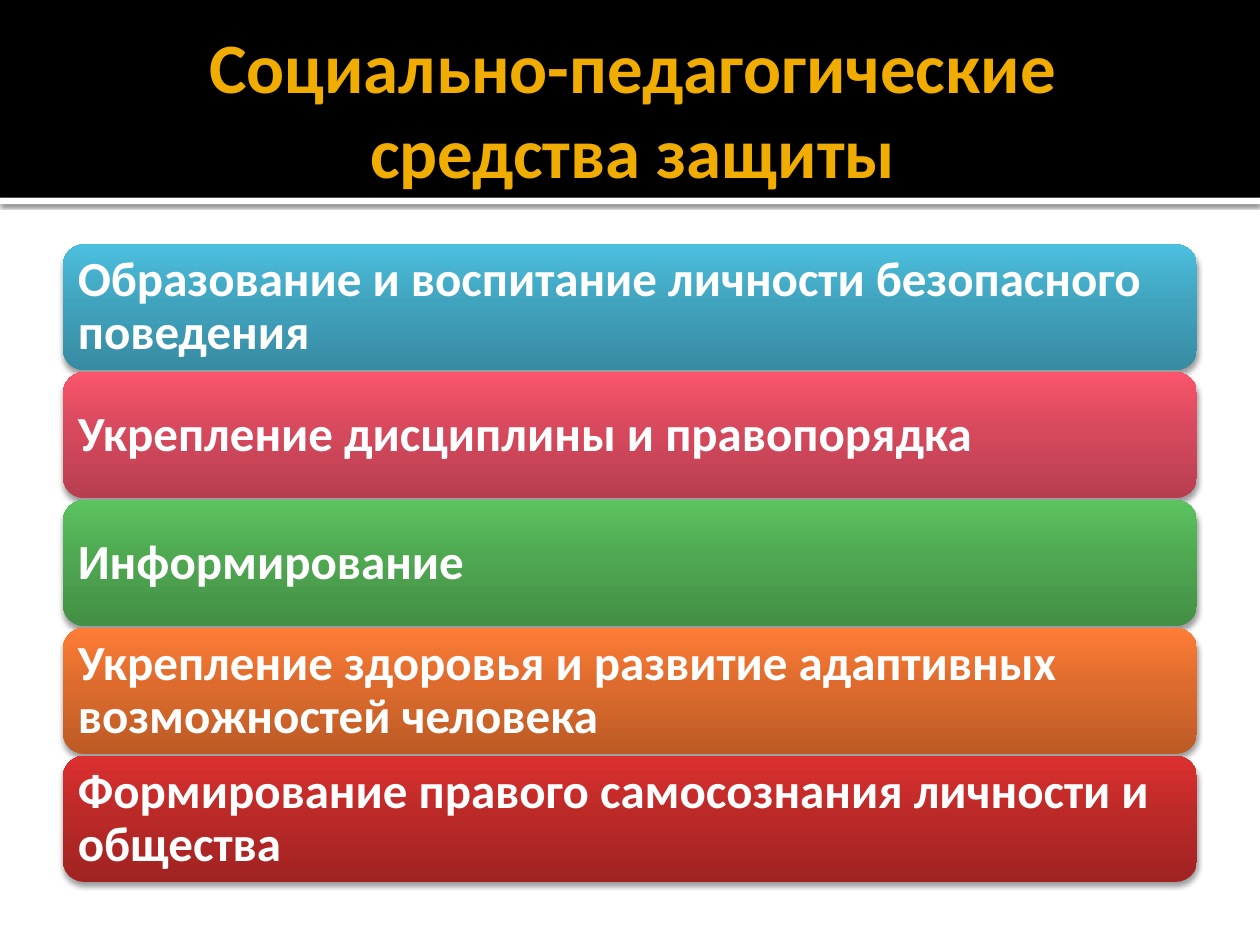
from dataclasses import dataclass

from lxml import etree
from pptx import Presentation
from pptx import util as u
from pptx.dml.color import RGBColor
from pptx.enum import shapes, text
from pptx.oxml import ns

WIDTH, HEIGHT = 10, 7.5
MARGIN = 0.05 * WIDTH
HEADER_HEIGHT = 1.57
FIRST_ROW, ROW_PITCH, ROW_HEIGHT = 1.94, 1.015, 1.0
FONT = "Calibri"
COLORS = {
    "white": "FFFFFF",
    "black": "000000",
    "gold": "F0AD00",
}


@dataclass(frozen=True)
class Box:
    left: float
    top: float
    width: float
    height: float

    def emu(self) -> list:
        return [u.Inches(v) for v in (self.left, self.top, self.width, self.height)]


@dataclass(frozen=True)
class Shadow:
    opacity: int
    blur: float
    distance: float


@dataclass(frozen=True)
class Measure:
    wording: str
    dark: str
    middle: str
    light: str


MEASURES = [
    Measure("Образование и воспитание личности безопасного поведения",
            "378BA2", "41A4BF", "4BBFDE"),
    Measure("Укрепление дисциплины и правопорядка", "B73E4F", "D7495D", "FA556C"),
    Measure("Информирование", "438F45", "4FA851", "5CC35F"),
    Measure("Укрепление здоровья и развитие адаптивных возможностей человека",
            "BC5B26", "DD6B2D", "FF7D37"),
    Measure("Формирование правого самосознания личности и общества",
            "A02322", "BC2A28", "DC302F"),
]


def add_color(parent, color: str):
    return etree.SubElement(parent, ns.qn("a:srgbClr"), val=color)


def add_panel(slide, kind, box: Box):
    panel = slide.shapes.add_shape(kind, *box.emu())
    panel.line.fill.background()
    panel.shadow.inherit = False
    return panel


def fill_solid(panel, color: str) -> None:
    panel.fill.solid()
    panel.fill.fore_color.rgb = RGBColor.from_string(color)


def fill_gradient(panel, stops: dict[int, str]) -> None:
    panel.fill.gradient()
    panel.fill.gradient_angle = 90
    stop_list = panel._element.spPr.find(".//" + ns.qn("a:gsLst"))
    for old in list(stop_list):
        stop_list.remove(old)
    for percent, color in stops.items():
        stop = etree.SubElement(stop_list, ns.qn("a:gs"), pos=str(percent * 1000))
        add_color(stop, color)


def cast_shadow(panel, shadow: Shadow) -> None:
    effects = panel._element.spPr.find(ns.qn("a:effectLst"))
    outer = etree.SubElement(
        effects, ns.qn("a:outerShdw"),
        blurRad=str(int(u.Pt(shadow.blur))), dist=str(int(u.Pt(shadow.distance))),
        dir="5400000", rotWithShape="0")
    tint = add_color(outer, COLORS["black"])
    etree.SubElement(tint, ns.qn("a:alpha"), val=str(shadow.opacity * 1000))


def write(holder, wording: str, size: float, color: str, align,
          insets: tuple[float, float, float, float], spacing: float = 1.0) -> None:
    frame = holder.text_frame
    frame.word_wrap = True
    frame.vertical_anchor = text.MSO_ANCHOR.MIDDLE
    (frame.margin_left, frame.margin_top,
     frame.margin_right, frame.margin_bottom) = [u.Inches(v) for v in insets]
    paragraph = frame.paragraphs[0]
    paragraph.alignment = align
    paragraph.line_spacing = spacing
    run = paragraph.add_run()
    run.text = wording
    run.font.name = FONT
    run.font.size = u.Pt(size)
    run.font.bold = True
    run.font.color.rgb = RGBColor.from_string(color)


def add_header(slide) -> None:
    rectangle = shapes.MSO_SHAPE.RECTANGLE
    stripe = add_panel(slide, rectangle, Box(0, HEADER_HEIGHT, WIDTH, 0.05))
    fill_solid(stripe, COLORS["white"])
    cast_shadow(stripe, Shadow(60, 2.5, 0.8))
    band = add_panel(slide, rectangle, Box(0, 0, WIDTH, HEADER_HEIGHT))
    fill_solid(band, COLORS["black"])
    title = slide.shapes.add_textbox(
        *Box(MARGIN, 0.17, WIDTH - 2 * MARGIN, 1.37).emu())
    write(title, "Социально-педагогические средства защиты", 40.5, COLORS["gold"],
          text.PP_ALIGN.CENTER, (0.1, 0.05, 0.05, 0.05))


def add_measure(slide, row: int, measure: Measure) -> None:
    box = Box(MARGIN, FIRST_ROW + row * ROW_PITCH, WIDTH - 2 * MARGIN, ROW_HEIGHT)
    bar = add_panel(slide, shapes.MSO_SHAPE.ROUNDED_RECTANGLE, box)
    fill_gradient(bar, {0: measure.dark, 55: measure.middle, 100: measure.light})
    cast_shadow(bar, Shadow(38, 3.1, 2))
    write(bar, measure.wording, 28, COLORS["white"], text.PP_ALIGN.LEFT,
          (0.07, 0.07, 0.07, 0.07), 0.9)


def main() -> None:
    deck = Presentation()
    deck.slide_width, deck.slide_height = u.Inches(WIDTH), u.Inches(HEIGHT)
    slide = deck.slides.add_slide(deck.slide_layouts[6])
    slide.background.fill.solid()
    slide.background.fill.fore_color.rgb = RGBColor.from_string(COLORS["white"])
    add_header(slide)
    for row, measure in enumerate(MEASURES):
        add_measure(slide, row, measure)
    deck.save("out.pptx")


if __name__ == "__main__":
    main()
